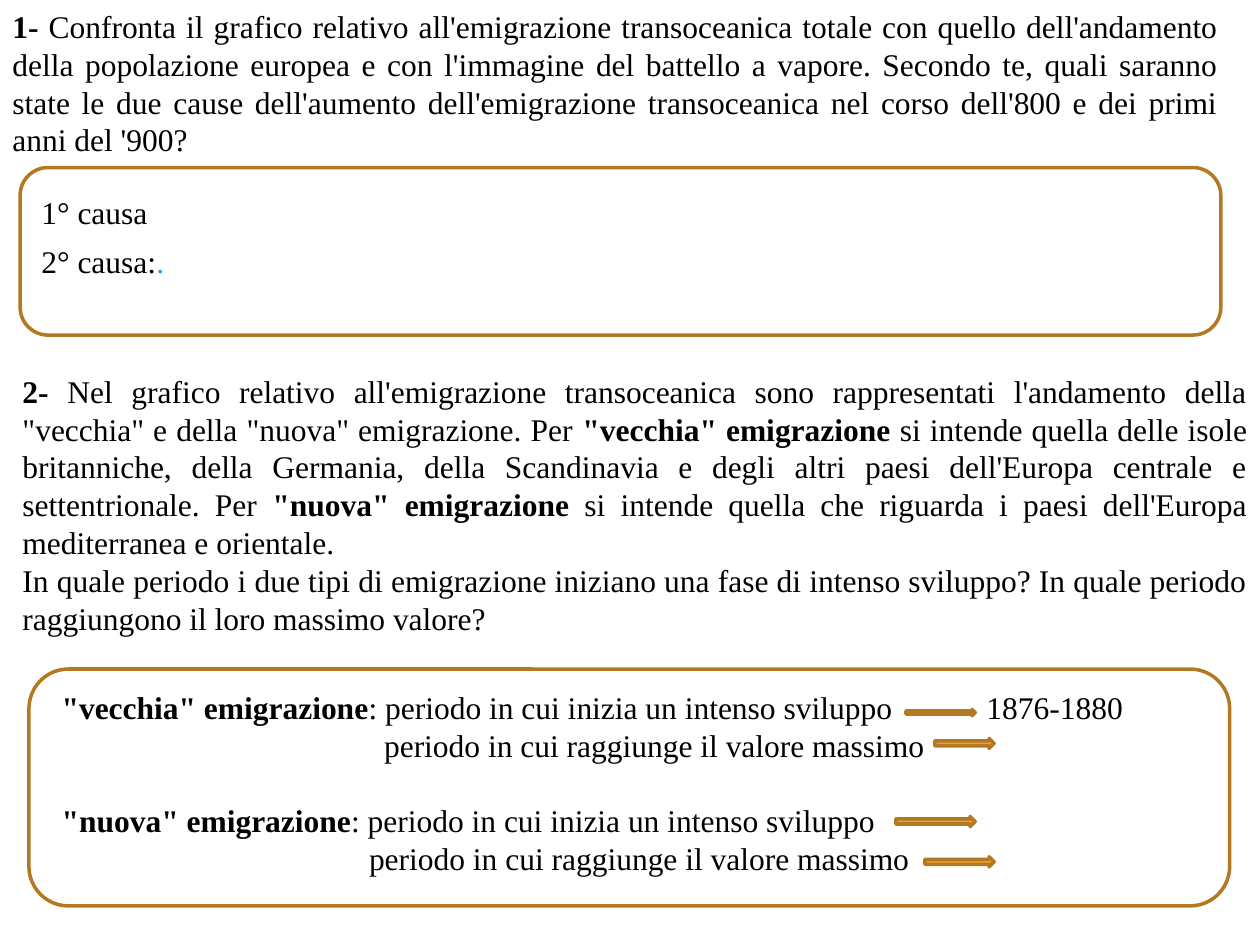
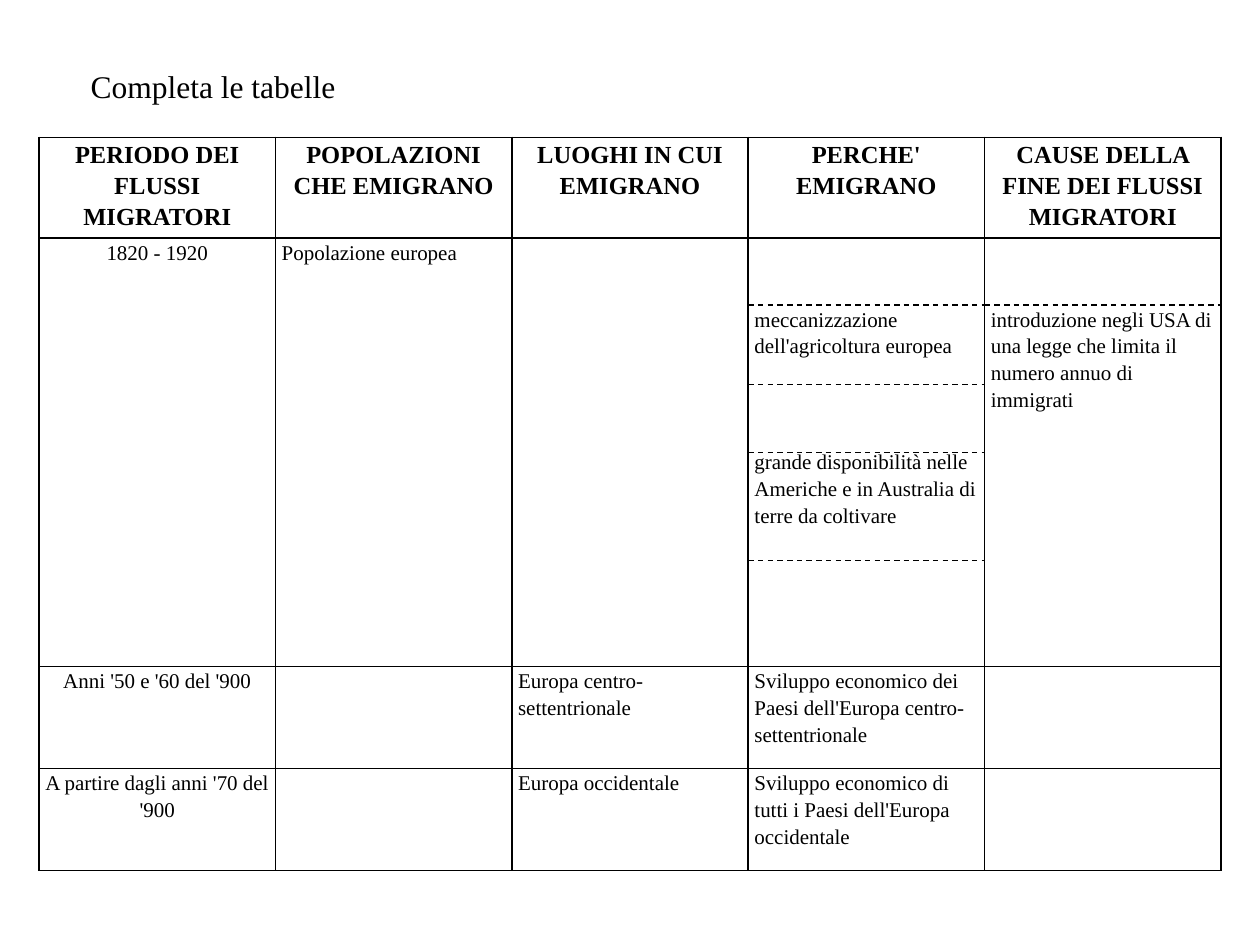
import pptx
import pptx.util
import pptx.dml.color
import pptx.enum.dml
import pptx.enum.shapes
import pptx.enum.text
import pptx.oxml
import pptx.oxml.ns
import lxml.etree

Inches, Pt = pptx.util.Inches, pptx.util.Pt
ALIGN = pptx.enum.text.PP_ALIGN
ANCHOR = pptx.enum.text.MSO_ANCHOR
SHAPE = pptx.enum.shapes.MSO_SHAPE
FONT = "Times New Roman"
BLACK, WHITE, BLUE = "000000", "FFFFFF", "00B0F0"
BROWN, ORANGE = "B27822", "F0A22E"


def rgb(value):
    return pptx.dml.color.RGBColor.from_string(value)


def sub(parent, tag, **attrs):
    return lxml.etree.SubElement(parent, pptx.oxml.ns.qn(tag), attrs)


def write(p, text, size=18, color=BLACK, bold=False, align=ALIGN.LEFT,
          after=0, spacing=1.0):
    """Append text to a paragraph; parts between ** are bold."""
    p.alignment, p.space_after, p.line_spacing = align, Pt(after), spacing
    for i, part in enumerate(text.split("**")):
        if part:
            r = p.add_run()
            r.text = part
            r.font.name, r.font.size = FONT, Pt(size)
            r.font.bold = bold or i % 2 == 1
            r.font.color.rgb = rgb(color)


def indent(p, left):
    p._p.get_or_add_pPr().set("marL", str(Inches(left)))


def tab_stop(p, position):
    tabs = sub(p._p.get_or_add_pPr(), "a:tabLst")
    sub(tabs, "a:tab", pos=str(Inches(position)), algn="l")


def border(cell, width=1):
    tcPr = cell._tc.get_or_add_tcPr()
    for i, side in enumerate(("a:lnL", "a:lnR", "a:lnT", "a:lnB")):
        ln = sub(tcPr, side, w=str(Pt(width)))
        sub(sub(ln, "a:solidFill"), "a:srgbClr", val=BLACK)
        tcPr.insert(i, ln)


class Deck:
    def __init__(self, prs):
        self.prs = prs
        self.s = None

    def slide(self, layout):
        self.s = self.prs.slides.add_slide(self.prs.slide_layouts.get_by_name(layout))

    def title(self, text, x, y, w, h):
        sp = self.s.shapes.title
        sp.left, sp.top, sp.width, sp.height = map(Inches, (x, y, w, h))
        tf = sp.text_frame
        tf.vertical_anchor = ANCHOR.TOP
        tf.auto_size = pptx.enum.text.MSO_AUTO_SIZE.NONE
        write(tf.paragraphs[0], text)

    def text(self, lines, x, y, w, h, **fmt):
        """Add a text box and return its paragraphs, one for each line."""
        sp = self.s.shapes.add_textbox(*map(Inches, (x, y, w, h)))
        tf = sp.text_frame
        tf.word_wrap = True
        tf.vertical_anchor = ANCHOR.MIDDLE
        for i, line in enumerate(lines):
            p = tf.add_paragraph() if i else tf.paragraphs[0]
            write(p, line, **fmt)
        return tf.paragraphs

    def shape(self, kind, fill, x, y, w, h):
        sp = self.s.shapes.add_shape(kind, *map(Inches, (x, y, w, h)))
        sp.shadow.inherit = False
        sp.fill.solid()
        sp.fill.fore_color.rgb = rgb(fill)
        sp.line.color.rgb = rgb(BROWN)
        sp.line.width = Pt(2)

    def answer_box(self, *box):
        self.shape(SHAPE.ROUNDED_RECTANGLE, WHITE, *box)

    def arrow(self, *box):
        self.shape(SHAPE.RIGHT_ARROW, ORANGE, *box)

    def dashed_rule(self, x, y, w):
        c = self.s.shapes.add_connector(
            pptx.enum.shapes.MSO_CONNECTOR.STRAIGHT,
            Inches(x), Inches(y), Inches(x + w), Inches(y))
        c.line.color.rgb = rgb(BLACK)
        c.line.width = Pt(0.8)
        c.line.dash_style = pptx.enum.dml.MSO_LINE.DASH
        sub(c._element.spPr, "a:effectLst")

    def table(self, rows, heights, x, y, w):
        frame = self.s.shapes.add_table(len(rows), len(rows[0]), Inches(x),
                                        Inches(y), Inches(w), Inches(sum(heights)))
        t = frame.table
        t.first_row = t.horz_banding = False
        for col in t.columns:
            col.width = Inches(w / len(rows[0]))
        for i, row in enumerate(rows):
            t.rows[i].height = Inches(heights[i])
            for j, text in enumerate(row):
                cell = t.cell(i, j)
                cell.fill.solid()
                cell.fill.fore_color.rgb = rgb(WHITE)
                border(cell)
                cell.margin_left = cell.margin_right = Inches(0.05)
                cell.margin_top = cell.margin_bottom = 0
                centred = i == 0 or j == 0
                for k, line in enumerate(text.split("\n")):
                    tf = cell.text_frame
                    p = tf.add_paragraph() if k else tf.paragraphs[0]
                    write(p, line, size=12 if i else 14, bold=i == 0, spacing=1.15,
                          after=10, align=ALIGN.CENTER if centred else ALIGN.LEFT)
        return t


def questions_slide(d):
    d.slide("Blank")
    d.text(["**1- **Confronta il grafico relativo all'emigrazione transoceanica totale con "
            "quello dell'andamento della popolazione europea e con l'immagine del battello "
            "a vapore. Secondo te, quali saranno state le due cause dell'aumento "
            "dell'emigrazione transoceanica nel corso dell'800 e dei primi anni del '900?"],
           0, 0, 9.77, 1.31, align=ALIGN.JUSTIFY)
    d.answer_box(0.16, 1.33, 9.53, 1.33)
    causes = d.text(["1° causa", "2° causa:"], 0.23, 1.48, 9.38, 0.79)
    write(causes[1], ".", color=BLUE)
    causes[0].space_after = Pt(6)

    d.text(["**2- **Nel grafico relativo all'emigrazione transoceanica sono rappresentati "
            "l'andamento della \"vecchia\" e della \"nuova\" emigrazione. Per **\"vecchia\" "
            "emigrazione** si intende quella delle isole britanniche, della Germania, della "
            "Scandinavia e degli altri paesi dell'Europa centrale e settentrionale. Per "
            "**\"nuova\" emigrazione** si intende quella che riguarda i paesi dell'Europa "
            "mediterranea e orientale.",
            "In quale periodo i due tipi di emigrazione iniziano una fase di intenso "
            "sviluppo? In quale periodo raggiungono il loro massimo valore?"],
           0.08, 2.89, 9.92, 2.22, align=ALIGN.JUSTIFY)
    d.answer_box(0.23, 5.31, 9.53, 1.88)
    start = ": periodo in cui inizia un intenso sviluppo"
    peak = "periodo in cui raggiunge il valore massimo"
    periods = d.text([f"**\"vecchia\" emigrazione**{start}\t1876-1880", peak,
                      f"**\"nuova\" emigrazione**{start}", peak],
                     0.39, 5.41, 9.38, 1.6)
    tab_stop(periods[0], 7.34)
    indent(periods[1], 2.56)
    periods[1].space_after = Pt(21.5)
    indent(periods[3], 2.44)
    for x, y, w, h in ((7.19, 5.63, 0.55, 0.05), (7.42, 5.86, 0.47, 0.08),
                       (7.11, 6.48, 0.63, 0.08), (7.34, 6.8, 0.55, 0.08)):
        d.arrow(x, y, w, h)


def table_slide(d):
    d.slide("Title Only")
    d.title("Completa le tabelle", 0.62, 0.48, 5, 0.39)
    left, width = 0.31, 9.38
    rows = [
        ["PERIODO DEI FLUSSI MIGRATORI", "POPOLAZIONI CHE EMIGRANO",
         "LUOGHI IN CUI EMIGRANO", "PERCHE' EMIGRANO",
         "CAUSE DELLA FINE DEI FLUSSI MIGRATORI"],
        ["1820 - 1920", "Popolazione europea", "",
         "meccanizzazione dell'agricoltura europea\n"
         "grande disponibilità nelle Americhe e in Australia di terre da coltivare",
         "introduzione negli USA di una legge che limita il numero annuo di immigrati"],
        ["Anni '50 e '60 del '900", "", "Europa centro-settentrionale",
         "Sviluppo economico dei Paesi dell'Europa centro-settentrionale", ""],
        ["A partire dagli anni '70 del '900", "", "Europa occidentale",
         "Sviluppo economico di tutti i Paesi dell'Europa occidentale", ""],
    ]
    t = d.table(rows, (0.8, 3.4, 0.81, 0.81), left, 1.09, width)
    reasons, endings = t.cell(1, 3), t.cell(1, 4)
    reasons.margin_top = endings.margin_top = Inches(0.53)
    reasons.text_frame.paragraphs[0].space_after = Pt(51)

    col = width / len(rows[0])
    for y in (2.42, 3.05, 3.59, 4.45):
        d.dashed_rule(left + 3 * col, y, col)
    d.dashed_rule(left + 4 * col, 2.42, col)


def main():
    prs = pptx.Presentation()
    prs.slide_width, prs.slide_height = Inches(10), Inches(7.5)
    d = Deck(prs)
    questions_slide(d)
    table_slide(d)
    prs.save("out.pptx")


if __name__ == "__main__":
    main()
